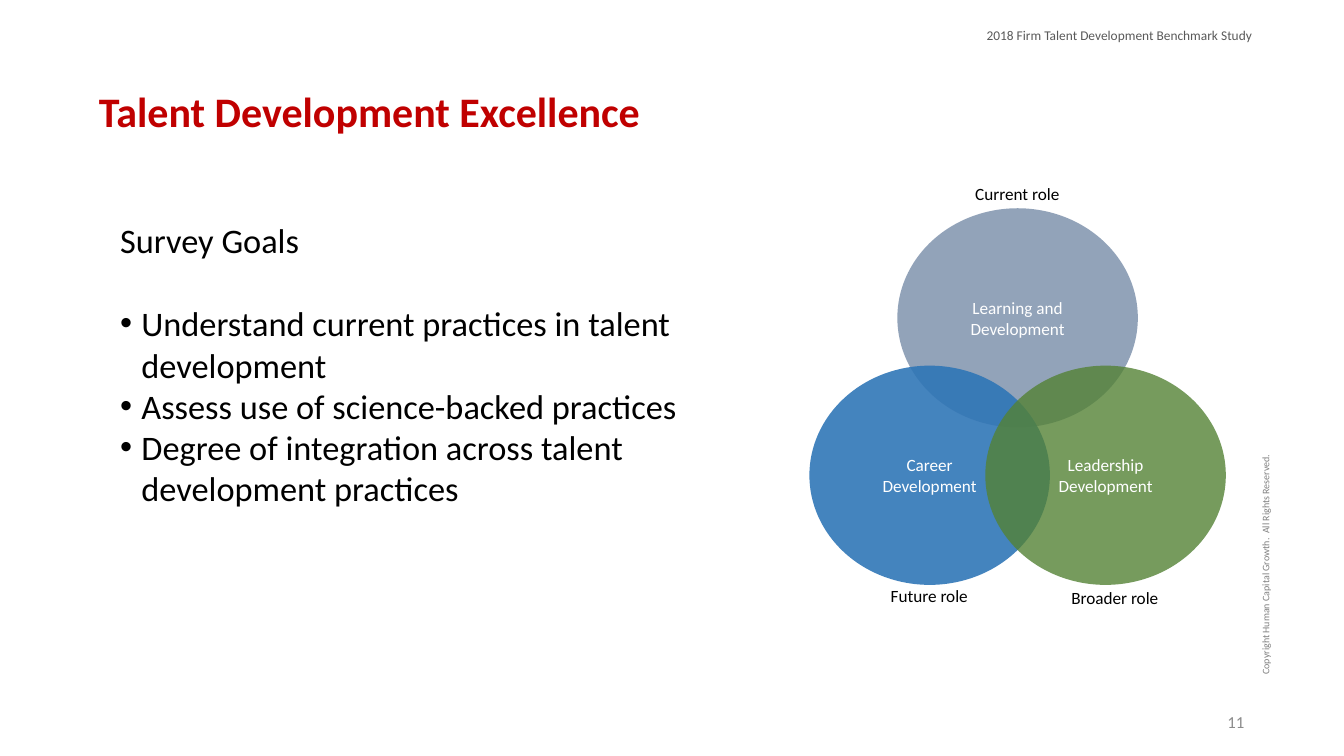
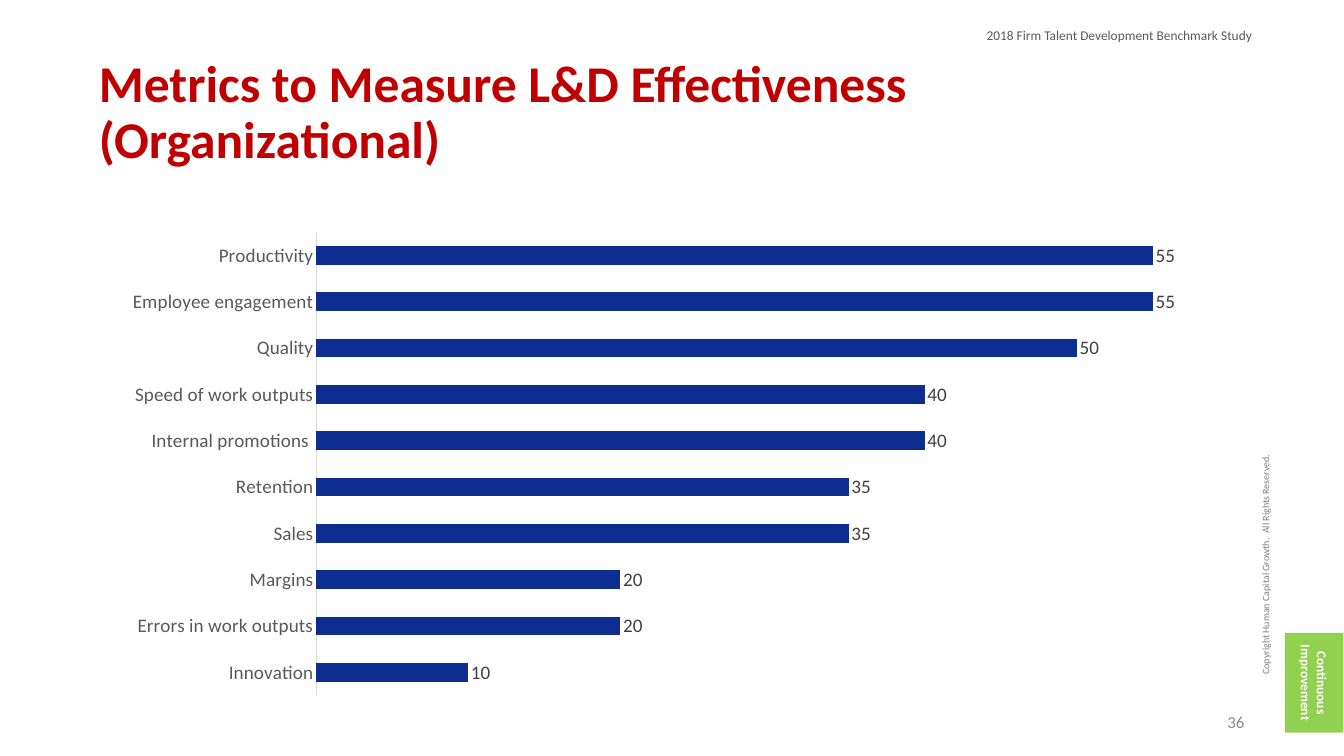
"""Build two slides of a talent development benchmark study."""
from dataclasses import dataclass

from lxml.etree import SubElement
from pptx import Presentation
from pptx.chart.data import CategoryChartData
from pptx.dml.color import RGBColor
from pptx.enum.chart import XL_CHART_TYPE, XL_LABEL_POSITION, XL_TICK_LABEL_POSITION, XL_TICK_MARK
from pptx.enum.shapes import MSO_SHAPE
from pptx.enum.text import MSO_ANCHOR, PP_ALIGN
from pptx.oxml.ns import qn
from pptx.util import Inches, Pt


@dataclass(frozen=True)
class Theme:
    font: str = "Calibri"
    title: str = "C00000"
    text: str = "000000"
    white: str = "FFFFFF"
    header: str = "595959"
    copyright: str = "808080"
    number: str = "8C8C8C"
    bar: str = "0E2D91"
    axis: str = "D9D9D9"
    value: str = "404040"
    tab: str = "92D050"
    body_size: float = 36
    chart_size: float = 20
    label_size: float = 18
    number_size: float = 17.6
    small_size: float = 14
    copyright_size: float = 10.5


T = Theme()
HEADER = "2018 Firm Talent Development Benchmark Study"
COPYRIGHT = "Copyright Human Capital Growth.  All Rights Reserved."

GOALS_HEADING = "Survey Goals"
GOALS = [
    "Understand current practices in talent development",
    "Assess use of science-backed practices",
    "Degree of integration across talent development practices",
]
CIRCLE_W, CIRCLE_H = 3.5, 3.19
CIRCLES = [
    (["Learning and Development"], 13.06, 3.03, "8497B0", 88),
    (["Career", "Development"], 11.78, 5.32, "2E75B6", 89),
    (["Leadership", "Development"], 14.34, 5.32, "548235", 80),
]
ROLES = [
    ("Current role", 13.22, 2.62),
    ("Future role", 11.94, 8.47),
    ("Broader role", 14.64, 8.49),
]
METRICS = [
    ("Productivity", 55),
    ("Employee engagement", 55),
    ("Quality", 50),
    ("Speed of work outputs", 40),
    ("Internal promotions ", 40),
    ("Retention", 35),
    ("Sales", 35),
    ("Margins", 20),
    ("Errors in work outputs", 20),
    ("Innovation", 10),
]


def rgb(color):
    return RGBColor.from_string(color)


def style_font(font, size, color, bold=False):
    font.name, font.size, font.bold = T.font, Pt(size), bold
    font.color.rgb = rgb(color)


def add_bullet(p, indent=0.31):
    pPr = p._p.get_or_add_pPr()
    pPr.set("marL", str(Inches(indent)))
    pPr.set("indent", str(-Inches(indent)))
    SubElement(pPr, qn("a:buFont"), typeface="Arial")
    SubElement(pPr, qn("a:buChar"), char="•")


def write(sp, lines, size=T.label_size, color=T.text, bold=False, align=PP_ALIGN.LEFT,
          anchor=MSO_ANCHOR.TOP, spacing=None, bullets_from=None, gap=0):
    tf = sp.text_frame
    tf.word_wrap, tf.vertical_anchor = True, anchor
    for i, line in enumerate(lines):
        p = tf.paragraphs[0] if i == 0 else tf.add_paragraph()
        if i == bullets_from:
            p.space_before = Pt(gap)
        if bullets_from is not None and i >= bullets_from:
            add_bullet(p)
        p.alignment = align
        if spacing:
            p.line_spacing = spacing
        r = p.add_run()
        r.text = line
        style_font(r.font, size, color, bold)


def add_text(slide, lines, x, y, w, h, rotation=0, **fmt):
    sp = slide.shapes.add_textbox(Inches(x), Inches(y), Inches(w), Inches(h))
    sp.rotation = rotation
    write(sp, lines, **fmt)


def add_filled(slide, kind, lines, x, y, w, h, fill, opacity=100, rotation=0, **fmt):
    sp = slide.shapes.add_shape(kind, Inches(x), Inches(y), Inches(w), Inches(h))
    sp.shadow.inherit = False
    sp.rotation = rotation
    sp.fill.solid()
    sp.fill.fore_color.rgb = rgb(fill)
    sp.line.fill.background()
    if opacity < 100:
        clr = sp.fill._xPr.find(qn("a:solidFill"))[0]
        SubElement(clr, qn("a:alpha"), val=str(opacity * 1000))
    tf = sp.text_frame
    tf.margin_left = tf.margin_right = Inches(0.15)
    tf.margin_top = tf.margin_bottom = Inches(0.07)
    write(sp, lines, color=T.white, align=PP_ALIGN.CENTER, anchor=MSO_ANCHOR.MIDDLE, **fmt)


def add_slide(prs, title, title_size, number):
    slide = prs.slides.add_slide(prs.slide_layouts[6])
    add_text(slide, [COPYRIGHT], 16.58, 7.88, 3.67, 0.4, rotation=270,
             size=T.copyright_size, color=T.copyright, anchor=MSO_ANCHOR.MIDDLE)
    add_text(slide, [HEADER], 14.26, 0.35, 4.16, 0.34, size=T.small_size, color=T.header)
    add_text(slide, [title], 1.34, 0.59, 16.87, 2.13, size=title_size, color=T.title,
             bold=True, anchor=MSO_ANCHOR.MIDDLE, spacing=0.9)
    add_text(slide, [str(number)], 13.81, 10.2, 4.4, 0.59, size=T.number_size,
             color=T.number, align=PP_ALIGN.RIGHT, anchor=MSO_ANCHOR.MIDDLE)
    return slide


def add_goals_slide(prs):
    slide = add_slide(prs, "Talent Development Excellence", 44, 11)
    for lines, x, y, fill, opacity in CIRCLES:
        add_filled(slide, MSO_SHAPE.OVAL, lines, x, y, CIRCLE_W, CIRCLE_H, fill, opacity)
    for role, x, y in ROLES:
        add_text(slide, [role], x, y, 3.17, 0.4, align=PP_ALIGN.CENTER)
    add_text(slide, [GOALS_HEADING, *GOALS], 1.65, 3.14, 9.14, 4.95,
             size=T.body_size, bullets_from=1, gap=44)


def add_metrics_chart(slide):
    data = CategoryChartData()
    data.categories = [name for name, _ in METRICS]
    data.add_series("Series 1", [value for _, value in METRICS])
    chart = slide.shapes.add_chart(XL_CHART_TYPE.BAR_CLUSTERED, Inches(1.6), Inches(3.24),
                                   Inches(16.62), Inches(7.02), data).chart
    chart.has_legend = chart.has_title = False
    style_font(chart.font, T.chart_size, T.text)

    names = chart.category_axis
    names.reverse_order = True
    names.major_tick_mark = names.minor_tick_mark = XL_TICK_MARK.NONE
    names.tick_label_position = XL_TICK_LABEL_POSITION.NEXT_TO_AXIS
    names.format.line.color.rgb = rgb(T.axis)
    names.format.line.width = Pt(0.75)
    style_font(names.tick_labels.font, T.chart_size, T.header)

    values = chart.value_axis
    values.visible = values.has_major_gridlines = False
    values.minimum_scale, values.maximum_scale = 0, 60

    plot = chart.plots[0]
    plot.vary_by_categories = False
    plot.gap_width, plot.overlap = 150, -25
    bars = plot.series[0]
    bars.format.fill.solid()
    bars.format.fill.fore_color.rgb = rgb(T.bar)
    labels = bars.data_labels
    labels.show_value = True
    labels.position = XL_LABEL_POSITION.OUTSIDE_END
    style_font(labels.font, T.chart_size, T.value)


def add_metrics_slide(prs):
    slide = add_slide(prs, "Metrics to Measure L&D Effectiveness (Organizational)", 54, 36)
    add_metrics_chart(slide)
    add_filled(slide, MSO_SHAPE.RECTANGLE, ["Continuous Improvement"], 18.4, 9.51, 1.45, 0.85,
               T.tab, rotation=90, size=T.small_size, bold=True)


def main():
    prs = Presentation()
    prs.slide_width, prs.slide_height = Inches(19.56), Inches(11)
    add_goals_slide(prs)
    add_metrics_slide(prs)
    prs.save("out.pptx")


if __name__ == "__main__":
    main()
